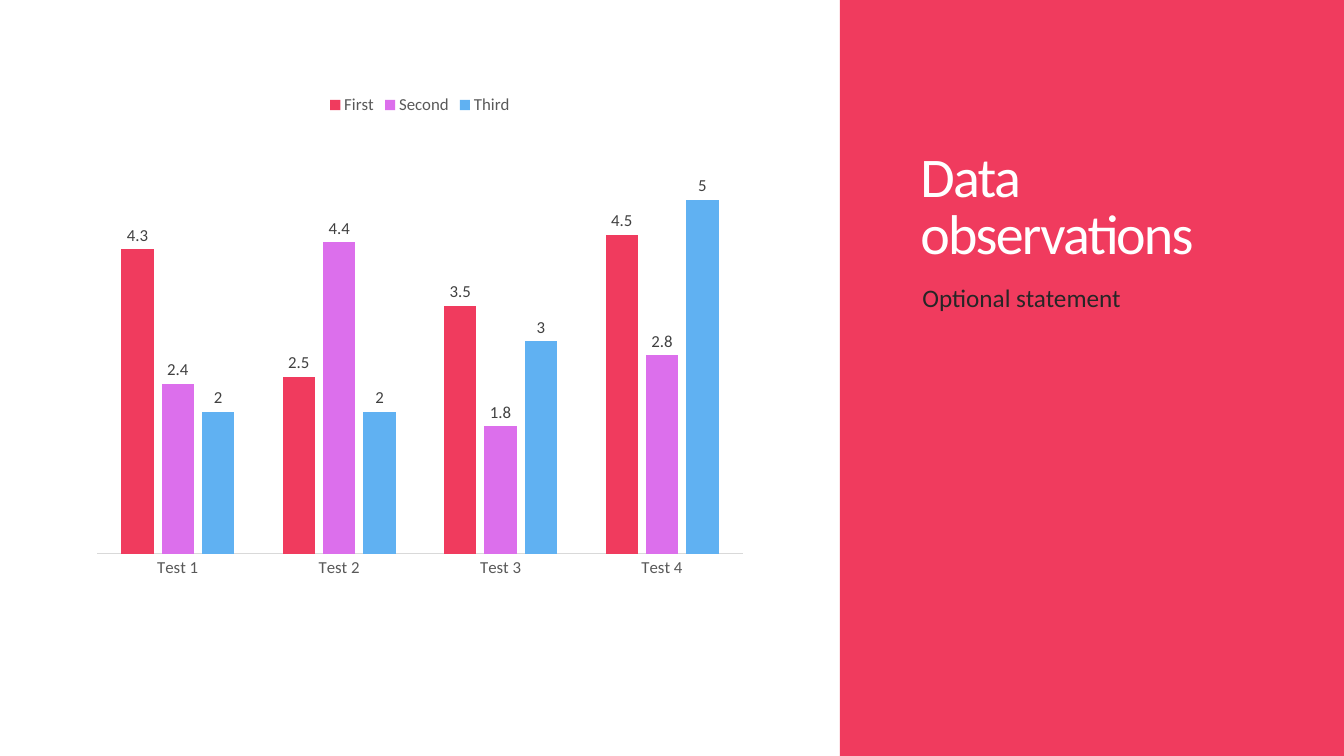
from dataclasses import dataclass

from pptx import Presentation
from pptx.chart.chart import Chart
from pptx.chart.data import CategoryChartData
from pptx.dml.color import RGBColor
from pptx.dml.fill import FillFormat
from pptx.enum.chart import XL_CHART_TYPE, XL_LABEL_POSITION, XL_LEGEND_POSITION, XL_TICK_MARK
from pptx.enum.shapes import MSO_SHAPE
from pptx.enum.text import MSO_ANCHOR
from pptx.slide import Slide
from pptx.text.text import Font
from pptx.util import Inches, Pt

COLUMNS = XL_CHART_TYPE.COLUMN_CLUSTERED
LABEL_ABOVE = XL_LABEL_POSITION.OUTSIDE_END
LEGEND_TOP = XL_LEGEND_POSITION.TOP
NO_TICK = XL_TICK_MARK.NONE
RECTANGLE = MSO_SHAPE.RECTANGLE
TOP = MSO_ANCHOR.TOP
BOTTOM = MSO_ANCHOR.BOTTOM

FONT = "Calibri"
RED = "F03B5E"


@dataclass
class Caption:
    text: str
    left: float
    top: float
    width: float
    height: float
    size: float
    color: str
    anchor: MSO_ANCHOR
    line_spacing: float = 1.0
    space_before: float = 0
    tracking: float = 0


@dataclass
class TestSeries:
    name: str
    values: tuple[float, ...]
    color: str


CAPTIONS = [
    Caption("Data observations", 9.03, 0.59, 3.7, 2.1, 40, "FFFFFF", BOTTOM,
            line_spacing=0.85, tracking=-1.2),
    Caption("Optional statement", 9.05, 2.75, 3.72, 3.42, 18, "262626", TOP,
            space_before=12),
]
TESTS = ["Test 1", "Test 2", "Test 3", "Test 4"]
SERIES = [
    TestSeries("First", (4.3, 2.5, 3.5, 4.5), RED),
    TestSeries("Second", (2.4, 4.4, 1.8, 2.8), "DC6FEC"),
    TestSeries("Third", (2, 2, 3, 5), "60B1F2"),
]


def rgb(color: str) -> RGBColor:
    return RGBColor.from_string(color)


def set_fill(fill: FillFormat, color: str) -> None:
    fill.solid()
    fill.fore_color.rgb = rgb(color)


def set_font(font: Font, size: float, color: str) -> None:
    font.name = FONT
    font.size = Pt(size)
    font.bold = False
    font.color.rgb = rgb(color)


def add_panel(page: Slide) -> None:
    panel = page.shapes.add_shape(RECTANGLE, Inches(8.33), 0, Inches(5), Inches(7.5))
    panel.shadow.inherit = False
    set_fill(panel.fill, RED)
    panel.line.fill.background()


def add_caption(page: Slide, caption: Caption) -> None:
    box = page.shapes.add_textbox(Inches(caption.left), Inches(caption.top),
                                  Inches(caption.width), Inches(caption.height))
    frame = box.text_frame
    frame.word_wrap = True
    frame.vertical_anchor = caption.anchor
    frame.text = caption.text
    para = frame.paragraphs[0]
    para.line_spacing = caption.line_spacing
    para.space_before = Pt(caption.space_before)
    span = para.runs[0]
    set_font(span.font, caption.size, caption.color)
    if caption.tracking:
        span._r.get_or_add_rPr().set("spc", str(round(caption.tracking * 100)))


def style_axes(chart: Chart) -> None:
    tests_axis = chart.category_axis
    tests_axis.major_tick_mark = NO_TICK
    tests_axis.minor_tick_mark = NO_TICK
    tests_axis.format.line.color.rgb = rgb("D9D9D9")
    tests_axis.format.line.width = Pt(0.75)
    set_font(tests_axis.tick_labels.font, 12, "595959")
    values_axis = chart.value_axis
    values_axis.visible = False
    values_axis.has_major_gridlines = False
    values_axis.minimum_scale = 0
    values_axis.maximum_scale = 6


def add_test_chart(page: Slide) -> None:
    data = CategoryChartData()
    data.categories = TESTS
    for series in SERIES:
        data.add_series(series.name, series.values)
    chart = page.shapes.add_chart(COLUMNS, Inches(0.83), Inches(0.83),
                                  Inches(6.67), Inches(5), data).chart
    set_font(chart.font, 10, "000000")
    chart.has_title = False
    chart.has_legend = True
    chart.legend.position = LEGEND_TOP
    chart.legend.include_in_layout = False
    set_font(chart.legend.font, 12, "595959")
    style_axes(chart)
    plot = chart.plots[0]
    plot.vary_by_categories = False
    plot.gap_width = 150
    plot.overlap = -25
    for series, columns in zip(SERIES, plot.series):
        set_fill(columns.format.fill, series.color)
        labels = columns.data_labels
        labels.show_value = True
        labels.position = LABEL_ABOVE
        set_font(labels.font, 12, "404040")


def main() -> None:
    deck = Presentation()
    deck.slide_width = Inches(13.33)
    deck.slide_height = Inches(7.5)
    page = deck.slides.add_slide(deck.slide_layouts[6])
    set_fill(page.background.fill, "FFFFFF")
    add_panel(page)
    for caption in CAPTIONS:
        add_caption(page, caption)
    add_test_chart(page)
    deck.save("out.pptx")


if __name__ == "__main__":
    main()
